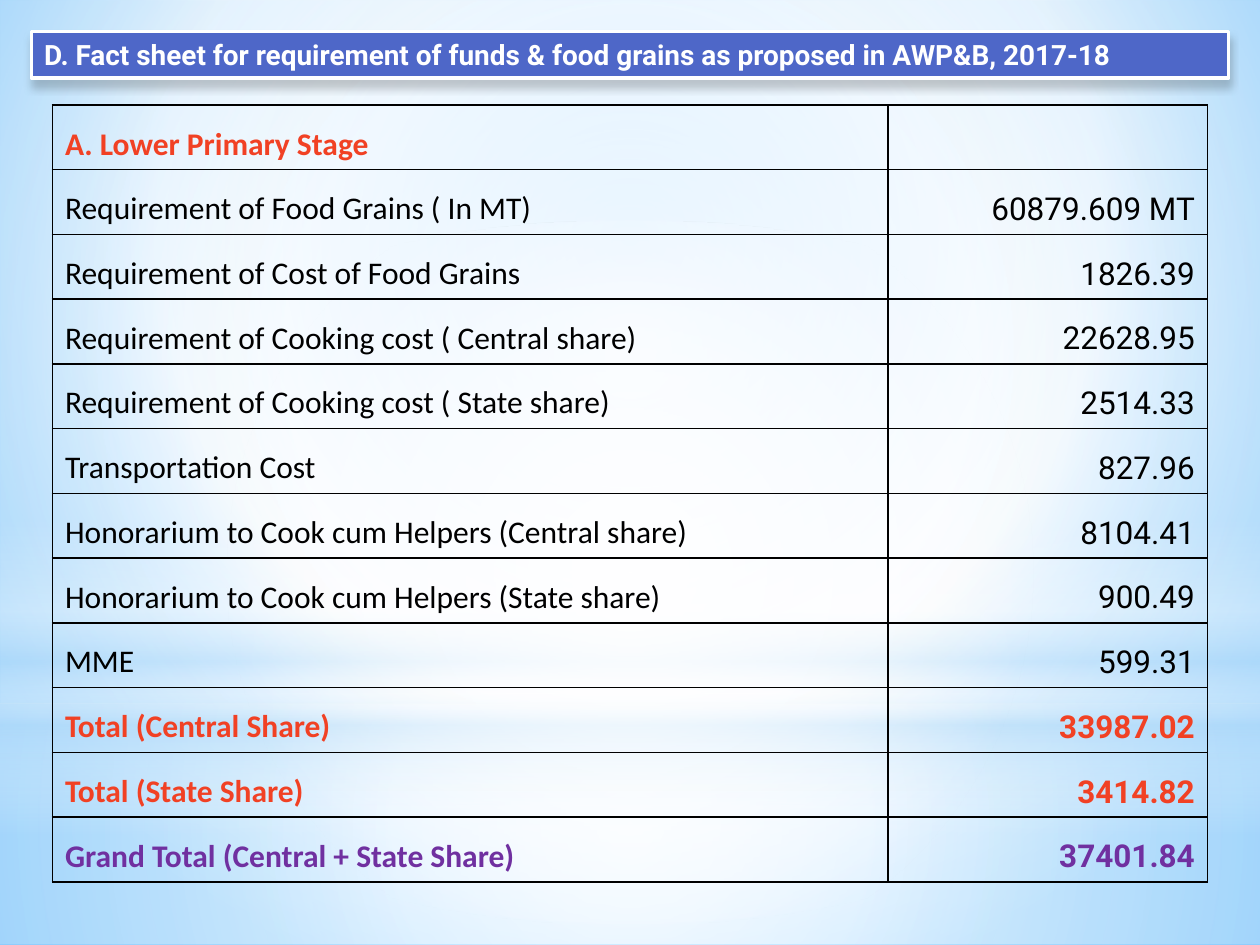
import pptx
import pptx.util
import pptx.dml.color
import pptx.enum.shapes
import pptx.enum.text
import pptx.oxml
import pptx.oxml.ns
from dataclasses import dataclass

Pt = pptx.util.Pt
RGB = pptx.dml.color.RGBColor.from_string
SHAPE = pptx.enum.shapes.MSO_SHAPE
ALIGN = pptx.enum.text.PP_ALIGN
ANCHOR = pptx.enum.text.MSO_ANCHOR
NS = pptx.oxml.ns.nsdecls("a")


@dataclass(frozen=True)
class Theme:
    label_font: str = "Calibri"
    number_font: str = "Roboto"
    title_size: int = 16
    body_size: int = 18
    white: str = "FFFFFF"
    black: str = "000000"
    banner: str = "4E67C8"
    haze: str = "B4DCFA"
    accent: str = "F14124"
    grand: str = "7030A0"
    sky: str = "9ED5FF"
    deep_sky: str = "5BB9FF"


def write(tf, text, *, font, size, color, bold=False, align=ALIGN.LEFT, hang=0):
    p = tf.paragraphs[0]
    p.alignment = align
    if hang:
        pPr = p._p.get_or_add_pPr()
        pPr.set("marL", str(Pt(hang)))
        pPr.set("indent", str(-Pt(hang)))
    r = p.add_run()
    r.text = text
    r.font.name, r.font.size, r.font.bold = font, Pt(size), bold
    r.font.color.rgb = RGB(color)


def gradient(stops, center=None, angle=90):
    """Gradient of (position, colour, opacity); radial when center is given."""
    gs = "".join(
        f'<a:gs pos="{pos * 1000}"><a:srgbClr val="{color}">'
        f'<a:alpha val="{alpha * 1000}"/></a:srgbClr></a:gs>'
        for pos, color, alpha in stops)
    if center:
        rect = " ".join(f'{side}="{v * 1000}"' for side, v in zip("ltrb", center))
        way = f'<a:path path="circle"><a:fillToRect {rect}/></a:path>'
    else:
        way = f'<a:lin ang="{angle * 60000}" scaled="0"/>'
    return pptx.oxml.parse_xml(
        f'<a:gradFill {NS} rotWithShape="1"><a:gsLst>{gs}</a:gsLst>{way}</a:gradFill>')


class Deck:
    def __init__(self, prs, theme):
        self.prs, self.theme = prs, theme
        self.s = prs.slides.add_slide(prs.slide_layouts[5])

    def background(self, stops, center):
        fill = self.s.background.fill
        fill.solid()
        solid = self.s.element.find(".//" + pptx.oxml.ns.qn("a:solidFill"))
        solid.getparent().replace(solid, gradient(stops, center))

    def glow(self, kind, top, height, stops, center=None):
        """Full-width gradient shape, kept behind the title."""
        sp = self.s.shapes.add_shape(kind, 0, Pt(top), self.prs.slide_width, Pt(height))
        sp.shadow.inherit = False
        sp.line.fill.background()
        sp.fill.solid()
        solid = sp.element.spPr.find(pptx.oxml.ns.qn("a:solidFill"))
        solid.getparent().replace(solid, gradient(stops, center))
        self.s.shapes.title.element.addprevious(sp.element)

    def title(self, text, left, top, width, height):
        t, sp = self.theme, self.s.shapes.title
        sp.left, sp.top, sp.width, sp.height = map(Pt, (left, top, width, height))
        sp.fill.solid()
        sp.fill.fore_color.rgb = RGB(t.banner)
        sp.line.color.rgb = RGB(t.white)
        sp.line.width = Pt(2)
        sp.element.spPr.append(pptx.oxml.parse_xml(
            f'<a:effectLst {NS}><a:outerShdw blurRad="{Pt(5)}" dist="{Pt(4)}" '
            f'dir="5400000" rotWithShape="0"><a:srgbClr val="{t.black}">'
            '<a:alpha val="20000"/></a:srgbClr></a:outerShdw></a:effectLst>'))
        tf = sp.text_frame
        tf.word_wrap = True
        tf.auto_size = pptx.enum.text.MSO_AUTO_SIZE.NONE
        tf.vertical_anchor = ANCHOR.TOP
        write(tf, text, font=t.number_font, size=t.title_size, color=t.white,
              bold=True, hang=27)

    def table(self, rows, left, top, widths, row_height):
        t = self.theme
        table = self.s.shapes.add_table(
            len(rows), len(widths), Pt(left), Pt(top),
            Pt(sum(widths)), Pt(row_height * len(rows))).table
        table.first_row = table.horz_banding = False
        for col, width in zip(table.columns, widths):
            col.width = Pt(width)
        columns = ((t.label_font, ALIGN.LEFT), (t.number_font, ALIGN.RIGHT))
        for i, (label, value, color) in enumerate(rows):
            table.rows[i].height = Pt(row_height)
            for j, (text, (font, align)) in enumerate(zip((label, value), columns)):
                cell = table.cell(i, j)
                cell.fill.background()
                cell.vertical_anchor = ANCHOR.BOTTOM
                self.borders(cell)
                if text:
                    write(cell.text_frame, text, font=font, size=t.body_size,
                          color=color, bold=color != t.black, align=align)

    def borders(self, cell):
        tcPr = cell._tc.get_or_add_tcPr()
        for i, side in enumerate("LRTB"):
            tcPr.insert(i, pptx.oxml.parse_xml(
                f'<a:ln{side} {NS} w="{Pt(1)}"><a:solidFill>'
                f'<a:srgbClr val="{self.theme.black}"/></a:solidFill></a:ln{side}>'))


def main():
    prs = pptx.Presentation()
    prs.slide_width, prs.slide_height = Pt(720), Pt(540)
    t = Theme()
    deck = Deck(prs, t)

    # Sky background and soft glows
    middle = (50, 50, 50, 50)
    deck.background([(0, t.sky, 100), (60, t.white, 100), (100, t.deep_sky, 100)],
                    (20, 10, 20, 60))
    deck.glow(SHAPE.RECTANGLE, 402, 138,
              [(0, t.white, 91), (37, t.white, 76), (100, t.haze, 79)], middle)
    deck.glow(SHAPE.RECTANGLE, 0, 402,
              [(0, t.white, 89), (48, t.white, 62), (100, t.haze, 79)], middle)
    deck.glow(SHAPE.RECTANGLE, 297, 180,
              [(0, t.white, 0), (29, t.white, 30), (45, t.haze, 40),
               (55, t.white, 26), (65, t.haze, 60), (100, t.white, 0)])
    deck.glow(SHAPE.OVAL, 126, 402, [(0, t.white, 100), (56, t.white, 0)], middle)

    # Title banner
    deck.title("D. Fact sheet for requirement of funds & food grains as proposed "
               "in AWP&B, 2017-18", 18, 18, 684, 26.5)

    # Requirements table
    deck.table([
        ("A. Lower Primary Stage", "", t.accent),
        ("Requirement of Food Grains ( In MT)", "60879.609 MT", t.black),
        ("Requirement of Cost of Food Grains", "1826.39", t.black),
        ("Requirement of Cooking cost ( Central share)", "22628.95", t.black),
        ("Requirement of Cooking cost ( State share)", "2514.33", t.black),
        ("Transportation Cost", "827.96", t.black),
        ("Honorarium to Cook cum Helpers (Central share)", "8104.41", t.black),
        ("Honorarium to Cook cum Helpers (State share)", "900.49", t.black),
        ("MME", "599.31", t.black),
        ("Total (Central Share)", "33987.02", t.accent),
        ("Total (State Share)", "3414.82", t.accent),
        ("Grand Total (Central + State Share)", "37401.84", t.grand),
    ], left=30, top=60, widths=(477.5, 182.5), row_height=37)

    prs.save("out.pptx")


if __name__ == "__main__":
    main()
